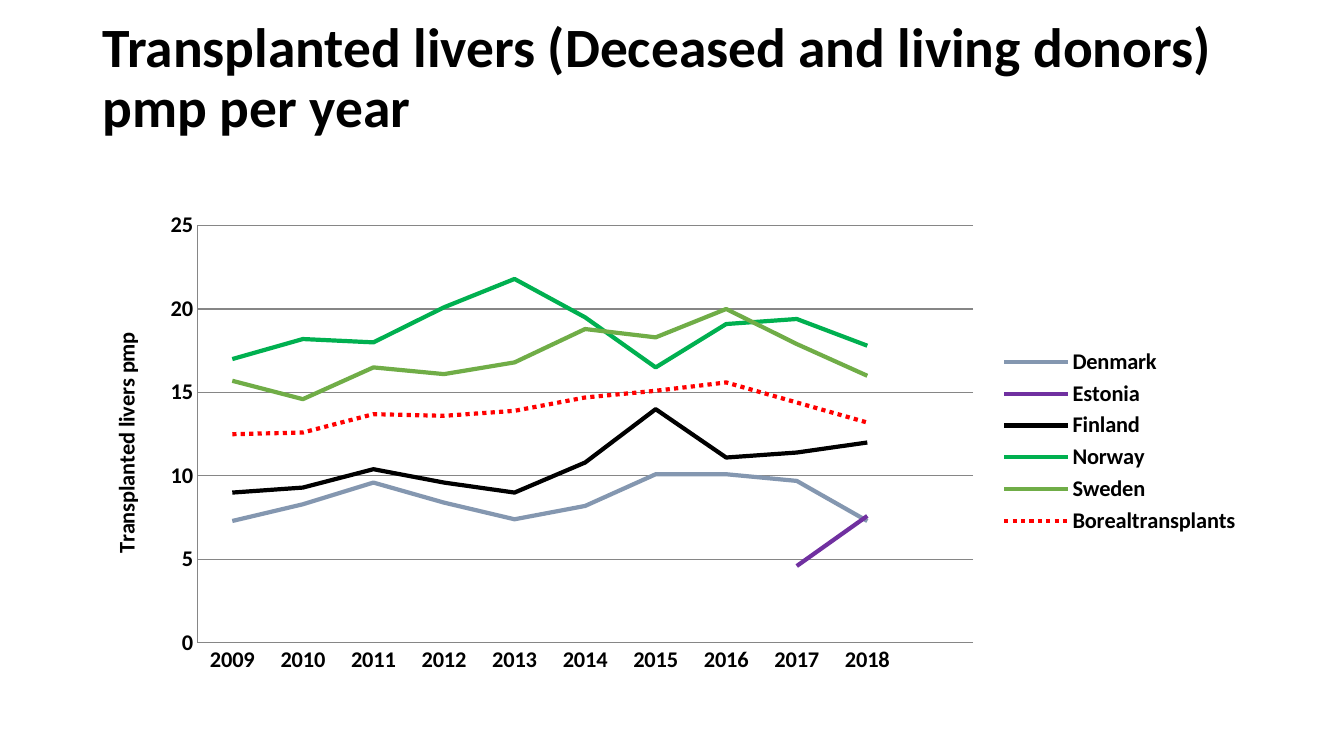
import pptx
import pptx.chart.data
import pptx.dml.color
import pptx.enum.chart
import pptx.enum.dml
import pptx.enum.text
import pptx.oxml
import pptx.oxml.ns
import pptx.util

RGBColor = pptx.dml.color.RGBColor
BLACK = RGBColor(0x00, 0x00, 0x00)
GREY = RGBColor(0x86, 0x86, 0x86)
SLATE = RGBColor(0x84, 0x97, 0xB0)
PURPLE = RGBColor(0x70, 0x30, 0xA0)
GREEN = RGBColor(0x00, 0xB0, 0x50)
OLIVE = RGBColor(0x70, 0xAD, 0x47)
RED = RGBColor(0xFF, 0x00, 0x00)

FONT = "Calibri"
WIDTH, HEIGHT = 13.33, 7.5
MARGIN = 0.92
CONTENT_WIDTH = WIDTH - 2 * MARGIN

YEARS = [str(year) for year in range(2009, 2019)]
OVERALL = "Borealtransplants"
# Name, line colour, first year, values
RATES = [
    ("Denmark", SLATE, 2009, [7.3, 8.3, 9.6, 8.4, 7.4, 8.2, 10.1, 10.1, 9.7, 7.3]),
    ("Estonia", PURPLE, 2017, [4.6, 7.6]),
    ("Finland", BLACK, 2009, [9, 9.3, 10.4, 9.6, 9, 10.8, 14, 11.1, 11.4, 12]),
    ("Norway", GREEN, 2009, [17, 18.2, 18, 20.1, 21.8, 19.5, 16.5, 19.1, 19.4, 17.8]),
    ("Sweden", OLIVE, 2009, [15.7, 14.6, 16.5, 16.1, 16.8, 18.8, 18.3, 20, 17.9, 16]),
    (OVERALL, RED, 2009,
     [12.5, 12.6, 13.7, 13.6, 13.9, 14.7, 15.1, 15.6, 14.4, 13.2]),
]


def box(left, top, width, height):
    return [pptx.util.Inches(n) for n in (left, top, width, height)]


def style_font(font, size, color=BLACK, bold=True):
    font.name = FONT
    font.size = pptx.util.Pt(size)
    font.bold = bold
    font.color.rgb = color


def add_text(slide, place, text, size, line_spacing=1.0, bottom_inset=0.05, **style):
    sp = slide.shapes.add_textbox(*place)
    tf = sp.text_frame
    tf.word_wrap = True
    tf.vertical_anchor = pptx.enum.text.MSO_ANCHOR.MIDDLE
    tf.margin_bottom = pptx.util.Inches(bottom_inset)
    p = tf.paragraphs[0]
    p.line_spacing = line_spacing
    r = p.add_run()
    r.text = text
    style_font(r.font, size, **style)


def style_line(line, color, width):
    line.color.rgb = color
    line.width = pptx.util.Pt(width)


def style_axis(axis):
    axis.major_tick_mark = pptx.enum.chart.XL_TICK_MARK.NONE
    axis.minor_tick_mark = pptx.enum.chart.XL_TICK_MARK.NONE
    style_line(axis.format.line, GREY, 0.75)


def set_plot_layout(chart, **shares):
    """Place the inner plot area by shares of the chart's size."""
    ns = pptx.oxml.ns.nsdecls("c")
    parts = "".join(f'<c:{k} val="{v}"/>' for k, v in shares.items())
    layout = pptx.oxml.parse_xml(
        f'<c:layout {ns}><c:manualLayout><c:layoutTarget val="inner"/>'
        f'<c:xMode val="edge"/><c:yMode val="edge"/>{parts}'
        f'</c:manualLayout></c:layout>')
    area = chart.element.find(".//" + pptx.oxml.ns.qn("c:plotArea"))
    for old in area.findall(pptx.oxml.ns.qn("c:layout")):
        area.remove(old)
    area.insert(0, layout)


def add_line_chart(slide, place, axis_title):
    # An unnamed last category leaves room after 2018
    data = pptx.chart.data.CategoryChartData()
    data.categories = YEARS + [""]
    for name, _, first, values in RATES:
        data.add_series(name, [None] * (first - 2009) + values + [None])
    chart = slide.shapes.add_chart(
        pptx.enum.chart.XL_CHART_TYPE.LINE, *place, data).chart
    chart.has_title = False
    style_font(chart.font, 16)
    set_plot_layout(chart, x=0.09, y=0.05, w=0.67, h=0.87)

    # Axes
    style_axis(chart.category_axis)
    axis = chart.value_axis
    style_axis(axis)
    axis.minimum_scale, axis.maximum_scale, axis.major_unit = 0, 25, 5
    axis.has_major_gridlines = True
    style_line(axis.major_gridlines.format.line, GREY, 0.75)
    r = axis.axis_title.text_frame.paragraphs[0].add_run()
    r.text = axis_title
    style_font(r.font, 16)

    # Legend
    chart.has_legend = True
    chart.legend.position = pptx.enum.chart.XL_LEGEND_POSITION.RIGHT
    chart.legend.include_in_layout = False
    style_font(chart.legend.font, 16)

    # Country lines, with the overall rate dotted
    chart.plots[0].vary_by_categories = False
    for series, (name, color, _, _) in zip(chart.plots[0].series, RATES):
        series.smooth = False
        series.marker.style = pptx.enum.chart.XL_MARKER_STYLE.NONE
        style_line(series.format.line, color, 3)
        if name == OVERALL:
            series.format.line.dash_style = pptx.enum.dml.MSO_LINE.ROUND_DOT


def main():
    prs = pptx.Presentation()
    prs.slide_width = pptx.util.Inches(WIDTH)
    prs.slide_height = pptx.util.Inches(HEIGHT)
    slide = prs.slides.add_slide(prs.slide_layouts[6])
    add_text(slide, box(MARGIN, 0.4, CONTENT_WIDTH, 1.45),
             "Transplanted livers (Deceased and living donors) pmp per year",
             size=39.6, line_spacing=0.9, bottom_inset=0.72)
    add_line_chart(slide, box(MARGIN, 2, CONTENT_WIDTH, 4.76),
                   "Transplanted livers pmp")
    prs.save("out.pptx")


if __name__ == "__main__":
    main()
